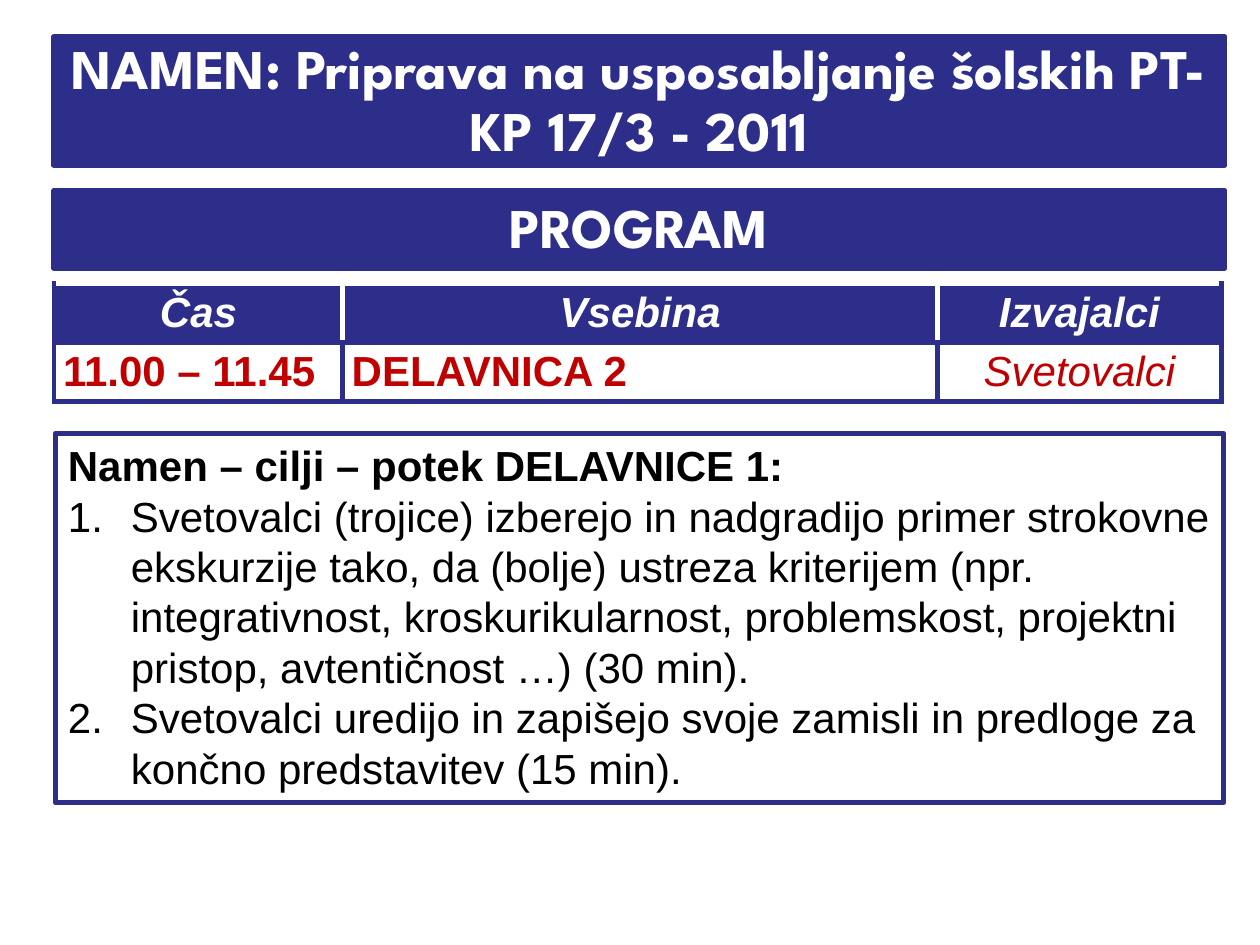
import dataclasses

import lxml.etree
import pptx
import pptx.dml.color
import pptx.enum.shapes
import pptx.enum.text
import pptx.oxml
import pptx.oxml.ns
import pptx.util

Cm = pptx.util.Cm
Pt = pptx.util.Pt
ALIGN = pptx.enum.text.PP_ALIGN
ANCHOR = pptx.enum.text.MSO_ANCHOR
COLORS = {"navy": "2D2D8A", "white": "FFFFFF", "red": "C00000", "black": "000000"}
BORDER = Pt(3)


@dataclasses.dataclass(frozen=True)
class Frame:
    left: float
    top: float
    width: float
    height: float

    def lengths(self) -> tuple:
        return tuple(Cm(value) for value in dataclasses.astuple(self))


@dataclasses.dataclass(frozen=True)
class TextStyle:
    size: int
    font: str
    color: str
    bold: bool = False
    italic: bool = False
    align: ALIGN = ALIGN.LEFT


@dataclasses.dataclass(frozen=True)
class TableCell:
    text: str
    style: TextStyle
    fill: str
    borders: dict


BANNER = TextStyle(32, "League Spartan", "white", bold=True, align=ALIGN.CENTER)
HEADER = TextStyle(24, "Arial", "white", bold=True, italic=True, align=ALIGN.CENTER)
ENTRY = TextStyle(24, "Arial", "red", bold=True)
PRESENTER = TextStyle(24, "Arial", "red", italic=True, align=ALIGN.CENTER)
HEADING = TextStyle(24, "Arial", "black", bold=True)
BODY = TextStyle(24, "Arial", "black")

TITLE = "NAMEN: Priprava na usposabljanje šolskih PT-KP 17/3 - 2011"
COLUMN_WIDTHS = (5.82, 11.99, 5.72)
ROW_HEIGHT = 1.19
HEADERS = ("Čas", "Vsebina", "Izvajalci")
ENTRIES = (("11.00 – 11.45", ENTRY), ("DELAVNICA 2", ENTRY), ("Svetovalci", PRESENTER))
WORKSHOP_HEADING = "Namen – cilji – potek DELAVNICE 1:"
WORKSHOP_STEPS = (
    "Svetovalci (trojice) izberejo in nadgradijo primer strokovne ekskurzije tako, "
    "da (bolje) ustreza kriterijem (npr. integrativnost, kroskurikularnost, "
    "problemskost, projektni pristop, avtentičnost …) (30 min).",
    "Svetovalci uredijo in zapišejo svoje zamisli in predloge za končno "
    "predstavitev (15 min).",
)


def rgb(name: str) -> pptx.dml.color.RGBColor:
    return pptx.dml.color.RGBColor.from_string(COLORS[name])


def write(para, text: str, style: TextStyle) -> None:
    para.text = text
    para.alignment = style.align
    for span in para.runs:
        span.font.size = Pt(style.size)
        span.font.name = style.font
        span.font.bold = style.bold
        span.font.italic = style.italic
        span.font.color.rgb = rgb(style.color)


def paint(shape, fill: str) -> None:
    shape.fill.solid()
    shape.fill.fore_color.rgb = rgb(fill)
    shape.line.color.rgb = rgb("navy")
    shape.line.width = BORDER


def add_box(page, frame: Frame, fill: str):
    box = page.shapes.add_shape(
        pptx.enum.shapes.MSO_SHAPE.RECTANGLE, *frame.lengths())
    box.shadow.inherit = False
    paint(box, fill)
    box.text_frame.word_wrap = True
    return box


def fill_banner(shape, text: str) -> None:
    paint(shape, "navy")
    frame = shape.text_frame
    frame.word_wrap = True
    frame.auto_size = pptx.enum.text.MSO_AUTO_SIZE.NONE
    frame.vertical_anchor = ANCHOR.MIDDLE
    write(frame.paragraphs[0], text, BANNER)
    frame.paragraphs[0].line_spacing = Pt(35)


def number(para) -> None:
    """Turn the paragraph into an automatically numbered item."""
    properties = para._p.get_or_add_pPr()
    properties.set("marL", str(Cm(1.27)))
    properties.set("indent", str(-Cm(1.27)))
    lxml.etree.SubElement(
        properties, pptx.oxml.ns.qn("a:buAutoNum"), type="arabicPeriod")


def set_borders(cell, borders: dict) -> None:
    properties = cell._tc.get_or_add_tcPr()
    for position, side in enumerate("LRTB"):
        color = COLORS[borders.get(side, "navy")]
        properties.insert(position, pptx.oxml.parse_xml(
            f'<a:ln{side} {pptx.oxml.ns.nsdecls("a")} w="{BORDER}">'
            f'<a:solidFill><a:srgbClr val="{color}"/></a:solidFill></a:ln{side}>'))


def fill_cell(cell, content: TableCell) -> None:
    cell.fill.solid()
    cell.fill.fore_color.rgb = rgb(content.fill)
    cell.vertical_anchor = ANCHOR.MIDDLE
    cell.margin_left = cell.margin_right = Cm(0.18)
    cell.margin_top = cell.margin_bottom = 0
    write(cell.text_frame.paragraphs[0], content.text, content.style)
    set_borders(cell, content.borders)


def header_borders(column: int) -> dict:
    """White on top and between the headers, navy on the outer edges."""
    borders = {"T": "white"}
    if column > 0:
        borders["L"] = "white"
    if column < len(HEADERS) - 1:
        borders["R"] = "white"
    return borders


def add_schedule(page) -> None:
    rows = (
        [TableCell(text, HEADER, "navy", header_borders(column))
         for column, text in enumerate(HEADERS)],
        [TableCell(text, style, "white", {}) for text, style in ENTRIES],
    )
    frame = Frame(1.09, 5.72, sum(COLUMN_WIDTHS), ROW_HEIGHT * len(rows))
    table = page.shapes.add_table(len(rows), len(HEADERS), *frame.lengths()).table
    for column, width in zip(table.columns, COLUMN_WIDTHS):
        column.width = Cm(width)
    for row, contents in zip(table.rows, rows):
        row.height = Cm(ROW_HEIGHT)
        for cell, content in zip(row.cells, contents):
            fill_cell(cell, content)


def add_workshop(page) -> None:
    box = add_box(page, Frame(1.12, 8.74, 23.55, 7.44), "white")
    box.text_frame.vertical_anchor = ANCHOR.TOP
    write(box.text_frame.paragraphs[0], WORKSHOP_HEADING, HEADING)
    for step in WORKSHOP_STEPS:
        para = box.text_frame.add_paragraph()
        number(para)
        write(para, step, BODY)


def main() -> None:
    deck = pptx.Presentation()
    deck.slide_width, deck.slide_height = Cm(25.4), Cm(19.05)
    page = deck.slides.add_slide(deck.slide_layouts[5])
    title = page.shapes.title
    title.left, title.top, title.width, title.height = Frame(
        1.09, 0.74, 23.6, 2.59).lengths()
    fill_banner(title, TITLE)
    add_schedule(page)
    fill_banner(add_box(page, Frame(1.09, 3.84, 23.6, 1.57), "navy"), "PROGRAM")
    add_workshop(page)
    deck.save("out.pptx")


if __name__ == "__main__":
    main()
